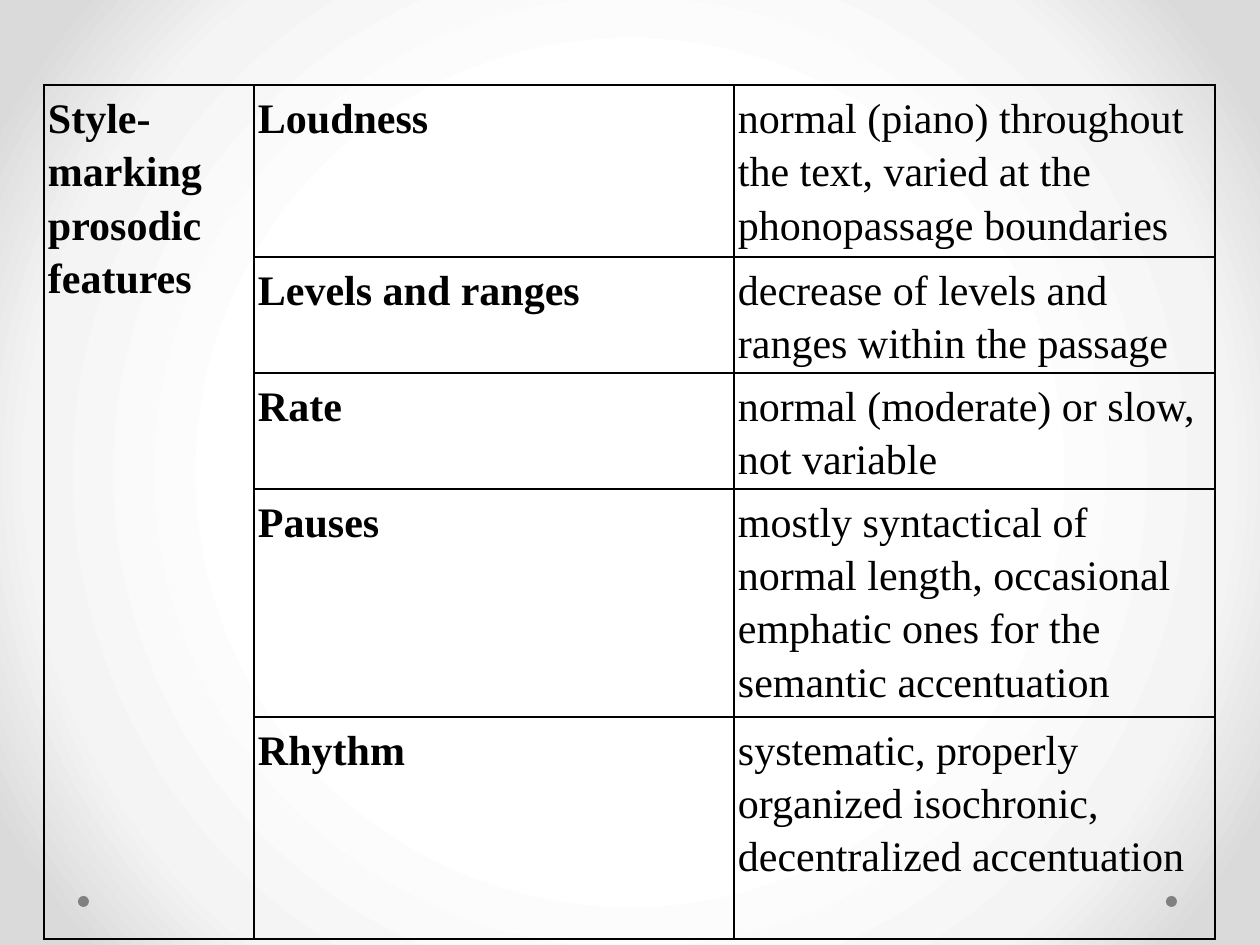
from lxml import etree
from pptx import Presentation
from pptx.dml.color import RGBColor
from pptx.enum.shapes import MSO_SHAPE
from pptx.oxml import parse_xml
from pptx.oxml.ns import nsdecls, qn
from pptx.util import Pt

OVAL = MSO_SHAPE.OVAL
BLACK = RGBColor(0, 0, 0)
GRAY = RGBColor(0x80, 0x80, 0x80)
WHITE = RGBColor(0xFF, 0xFF, 0xFF)
PALE = RGBColor(0xF4, 0xF4, 0xF4)
SILVER = RGBColor(0xDA, 0xDA, 0xDA)
STOPS = [(50, WHITE), (76, PALE), (92, SILVER)]
FONT = "Times New Roman"

HEAD = "Style-marking prosodic features"
COLS = [210, 480, 481]
# Feature, description, row height in px
ROWS = [
    ("Loudness", "normal (piano) throughout the text, varied at the "
     "phonopassage boundaries", 172),
    ("Levels and ranges", "decrease of levels and ranges within the passage",
     116),
    ("Rate", "normal (moderate) or slow, not variable", 116),
    ("Pauses", "mostly syntactical of normal length, occasional emphatic "
     "ones for the semantic accentuation", 228),
    ("Rhythm", "systematic, properly organized isochronic, decentralized "
     "accentuation", 222),
]


def px(n):
    return round(n * 914400 / 126)


def set_back(slide):
    """Give the slide a radial gradient background."""
    stops = "".join(f'<a:gs pos="{pos * 1000}"><a:srgbClr val="{tone}"/></a:gs>'
                    for pos, tone in STOPS)
    back = parse_xml(
        f'<p:bg {nsdecls("p", "a")}><p:bgPr><a:gradFill rotWithShape="1">'
        f'<a:gsLst>{stops}</a:gsLst><a:path path="circle">'
        '<a:fillToRect l="50000" t="50000" r="50000" b="50000"/></a:path>'
        '</a:gradFill><a:effectLst/></p:bgPr></p:bg>')
    slide.element.cSld.insert(0, back)


def add_dot(slide, left):
    dot = slide.shapes.add_shape(OVAL, px(left), px(896), px(11), px(11))
    dot.shadow.inherit = False
    dot.fill.solid()
    dot.fill.fore_color.rgb = GRAY
    dot.line.fill.background()


def frame(cell):
    """Draw thin black borders round a cell without fill."""
    props = cell._tc.get_or_add_tcPr()
    for side in ("lnL", "lnR", "lnT", "lnB"):
        line = etree.SubElement(props, qn(f"a:{side}"), w=str(Pt(1)))
        fill = etree.SubElement(line, qn("a:solidFill"))
        etree.SubElement(fill, qn("a:srgbClr"), val=str(BLACK))
    cell.fill.background()


def write(cell, text, bold):
    cell.text = text
    para = cell.text_frame.paragraphs[0]
    para.line_spacing = 1.15
    font = para.font
    font.name, font.size, font.bold = FONT, Pt(24), bold
    font.color.rgb = BLACK


def add_grid(slide):
    high = sum(row[2] for row in ROWS)
    grid = slide.shapes.add_table(len(ROWS), len(COLS), px(44), px(85),
                                  px(sum(COLS)), px(high)).table
    grid.first_row = grid.horz_banding = False
    for col, wide in zip(grid.columns, COLS):
        col.width = px(wide)
    for cell in grid.iter_cells():
        cell.margin_left = cell.margin_right = px(4)
        cell.margin_top = cell.margin_bottom = px(4)
        frame(cell)
    grid.cell(0, 0).merge(grid.cell(len(ROWS) - 1, 0))
    write(grid.cell(0, 0), HEAD, True)
    for i, (name, note, tall) in enumerate(ROWS):
        grid.rows[i].height = px(tall)
        write(grid.cell(i, 1), name, True)
        write(grid.cell(i, 2), note, False)


def main():
    deck = Presentation()
    deck.slide_width, deck.slide_height = px(1260), px(945)
    slide = deck.slides.add_slide(deck.slide_layouts[6])
    set_back(slide)
    for left in (1166, 78):
        add_dot(slide, left)
    add_grid(slide)
    deck.save("out.pptx")


if __name__ == "__main__":
    main()
